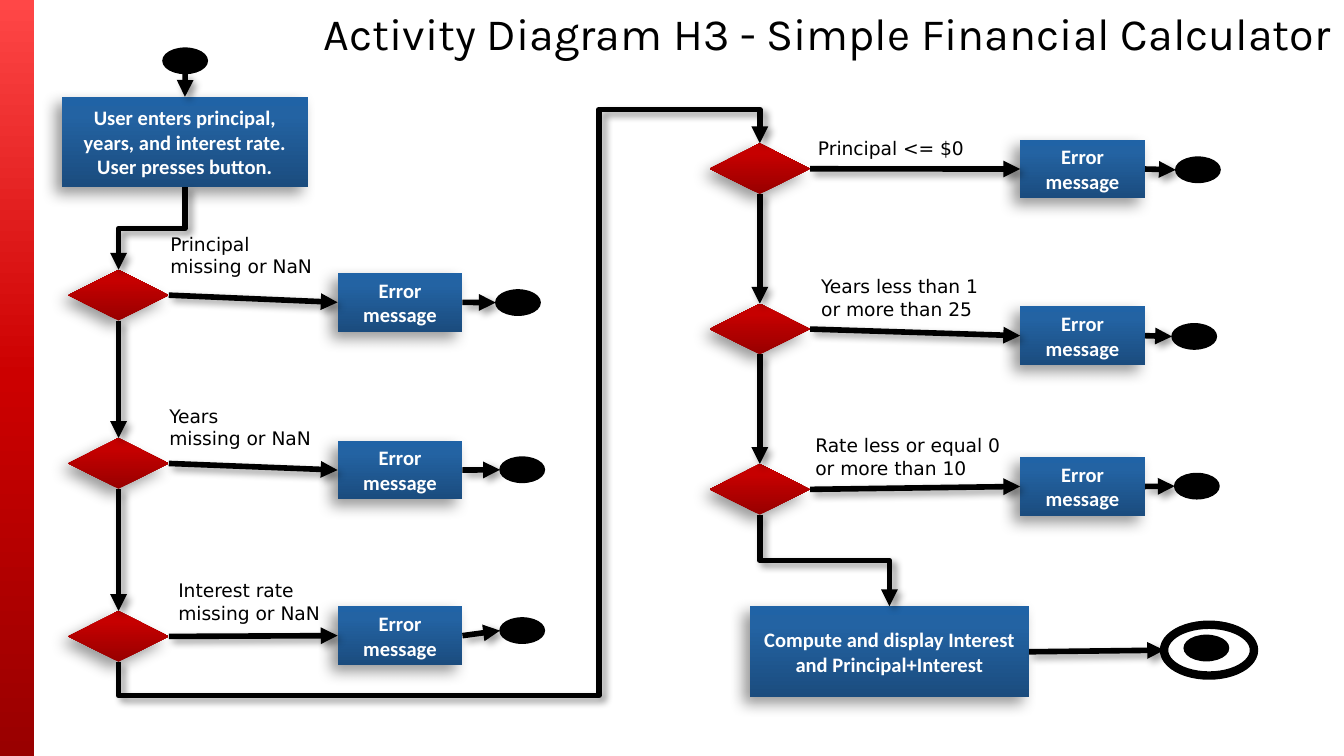
import copy

import pptx
import pptx.dml.color
import pptx.enum.shapes
import pptx.enum.text
import pptx.oxml
import pptx.oxml.ns
import pptx.util
from lxml import etree

Cm, Pt = pptx.util.Cm, pptx.util.Pt
qn = pptx.oxml.ns.qn
SHAPE = pptx.enum.shapes.MSO_SHAPE
CONNECTOR = pptx.enum.shapes.MSO_CONNECTOR
ALIGN = pptx.enum.text.PP_ALIGN
ANCHOR = pptx.enum.text.MSO_ANCHOR
AUTO_SIZE = pptx.enum.text.MSO_AUTO_SIZE

TITLE = "Activity Diagram H3 - Simple Financial Calculator"
ENTER = ("User enters principal, years, and interest rate.\vUser presses button.", 1.17, 1.83, 4.65, 1.71)
COMPUTE = ("Compute and display Interest and Principal+Interest", 14.17, 11.46, 5.28, 1.72)
ERROR = "Error message"

COLUMNS = [
    {"decision_x": 1.29, "error_x": 6.38, "checks": [
        {"decision_y": 5.1, "error_y": 5.16, "stop": (9.37, 5.48),
         "label": ("Principal missing or NaN", 2.97, 4.27, 3.35, 1.12)},
        {"decision_y": 8.28, "error_y": 8.33, "stop": (9.45, 8.64),
         "label": ("Years\vmissing or NaN", 2.95, 7.52, 3.35, 1.12)},
        {"decision_y": 11.55, "error_y": 11.46, "stop": (9.45, 11.68),
         "label": ("Interest rate missing or NaN", 3.12, 10.82, 3.35, 1.12)},
    ]},
    {"decision_x": 13.41, "error_x": 19.28, "checks": [
        {"decision_y": 2.71, "error_y": 2.64, "stop": (22.22, 2.97),
         "label": ("Principal <= $0", 15.21, 2.46, 3.4, 0.69)},
        {"decision_y": 5.74, "error_y": 5.79, "stop": (22.15, 6.12),
         "label": ("Years less than 1 or more than 25", 15.27, 5.08, 3.81, 1.12)},
        {"decision_y": 8.77, "error_y": 8.64, "stop": (22.2, 8.95),
         "label": ("Rate less or equal 0\vor more than 10", 15.16, 8.08, 4.27, 1.12)},
    ]},
]

RED = [(0, "980000"), (0.8, "C60000"), (1, "C70000")]
BLUE = [(0, "1B4C7E"), (0.8, "2363A3"), (1, "2063A6")]
SIDEBAR = [(0, "FF4747"), (0.5, "CC0000"), (1, "990000")]
TOP, LEFT, BOTTOM, RIGHT = range(4)

deck = pptx.Presentation()
deck.slide_width, deck.slide_height = Cm(25.4), Cm(14.29)
slide = deck.slides.add_slide(deck.slide_layouts[6])


def rgb(value):
    return pptx.dml.color.RGBColor.from_string(value)


def add_shadow(effects, blur, distance, angle):
    shadow = etree.SubElement(effects, qn("a:outerShdw"), blurRad=str(Pt(blur)),
                              dist=str(Pt(distance)), dir=str(angle * 60000),
                              algn="ctr", rotWithShape="0")
    black = etree.SubElement(shadow, qn("a:srgbClr"), val="000000")
    etree.SubElement(black, qn("a:alpha"), val="40000")


def gradient_shape(kind, x, y, w, h, stops, angle, shadow=True):
    shape = slide.shapes.add_shape(kind, Cm(x), Cm(y), Cm(w), Cm(h))
    shape.fill.gradient()
    shape.fill.gradient_angle = angle
    stop_list = shape._element.spPr.find(".//" + qn("a:gsLst"))
    stop_list.append(copy.deepcopy(stop_list[-1]))
    for stop, (position, color) in zip(shape.fill.gradient_stops, stops):
        stop.position = position
        stop.color.rgb = rgb(color)
    shape.line.fill.background()
    shape.shadow.inherit = False
    if shadow:
        add_shadow(shape._element.spPr.find(qn("a:effectLst")), 8, 5, 135)
    return shape


def write(shape, text, size, font, color, align=ALIGN.LEFT, bold=False):
    frame = shape.text_frame
    frame.word_wrap = True
    frame.text = text
    paragraph = frame.paragraphs[0]
    paragraph.alignment = align
    for run in paragraph.runs:
        run.font.size, run.font.name, run.font.bold = Pt(size), font, bold
        run.font.color.rgb = rgb(color)
    return frame


def process(text, x, y, w, h):
    box = gradient_shape(SHAPE.FLOWCHART_PROCESS, x, y, w, h, BLUE, 90)
    frame = write(box, text, 11, "Calibri", "FFFFFF", ALIGN.CENTER, True)
    frame.vertical_anchor = ANCHOR.MIDDLE
    frame.margin_left = frame.margin_right = frame.margin_top = frame.margin_bottom = Cm(0.25)
    return box


def ellipse(x, y, w=0.84, h=0.48, fill="000000", line_width=0.75):
    oval = slide.shapes.add_shape(SHAPE.OVAL, Cm(x), Cm(y), Cm(w), Cm(h))
    oval.fill.solid()
    oval.fill.fore_color.rgb = rgb(fill)
    oval.line.color.rgb = rgb("000000")
    oval.line.width = Pt(line_width)
    oval.shadow.inherit = False
    return oval


def label(text, x, y, w, h):
    box = slide.shapes.add_textbox(Cm(x), Cm(y), Cm(w), Cm(h))
    write(box, text, 10, "DejaVu Sans", "000000").auto_size = AUTO_SIZE.SHAPE_TO_FIT_TEXT


def side(shape, site):
    across, down = {TOP: (1, 0), LEFT: (0, 1), BOTTOM: (1, 2), RIGHT: (2, 1)}[site]
    return shape.left + shape.width * across // 2, shape.top + shape.height * down // 2


def add_arrow(kind, x1, y1, x2, y2):
    arrow = slide.shapes.add_connector(kind, x1, y1, x2, y2)
    arrow.line.color.rgb = rgb("000000")
    arrow.line.width = Pt(3)
    properties = arrow._element.spPr
    etree.SubElement(properties.find(qn("a:ln")), qn("a:tailEnd"), type="triangle")
    add_shadow(etree.SubElement(properties, qn("a:effectLst")), 4, 3, 45)
    return arrow


def straight(source, source_site, target, target_site):
    arrow = add_arrow(CONNECTOR.STRAIGHT, *side(source, source_site), *side(target, target_site))
    for shape, site, connect in ((source, source_site, arrow.begin_connect),
                                 (target, target_site, arrow.end_connect)):
        if shape.auto_shape_type != SHAPE.OVAL:
            connect(shape, site)


def elbow(source, target, rotation, flips, bends):
    (x1, y1), (x2, y2) = side(source, BOTTOM), side(target, TOP)
    w, h = abs(y2 - y1), abs(x2 - x1)
    x, y = (x1 + x2 - w) // 2, (y1 + y2 - h) // 2
    arrow = add_arrow(CONNECTOR.ELBOW, x, y, x + w, y + h)
    frame = arrow._element.spPr.find(qn("a:xfrm"))
    frame.set("rot", str(rotation * 60000))
    for flip in flips:
        frame.set(flip, "1")
    geometry = arrow._element.spPr.find(qn("a:prstGeom"))
    geometry.set("prst", f"bentConnector{len(bends) + 2}")
    for number, bend in enumerate(bends, 1):
        etree.SubElement(geometry.find(qn("a:avLst")), qn("a:gd"),
                         name=f"adj{number}", fmla=f"val {bend}")


gradient_shape(SHAPE.RECTANGLE, 0, 0, 0.64, 14.29, SIDEBAR, 270, shadow=False)
title = slide.shapes.add_textbox(Cm(1.07), Cm(0.05), Cm(24.33), Cm(1.15))
write(title, TITLE, 24, "Karla", "000000", ALIGN.RIGHT).vertical_anchor = ANCHOR.MIDDLE

start = ellipse(3.08, 0.91)
enter = process(*ENTER)
straight(start, BOTTOM, enter, TOP)

decisions = []
for column in COLUMNS:
    chain = []
    for check in column["checks"]:
        decision = gradient_shape(SHAPE.FLOWCHART_DECISION, column["decision_x"],
                                  check["decision_y"], 1.9, 0.96, RED, 90)
        error = process(ERROR, column["error_x"], check["error_y"], 2.36, 1.11)
        stop = ellipse(*check["stop"])
        straight(decision, RIGHT, error, LEFT)
        straight(error, RIGHT, stop, LEFT)
        label(*check["label"])
        if chain:
            straight(chain[-1], BOTTOM, decision, TOP)
        chain.append(decision)
    decisions.append(chain)

compute = process(*COMPUTE)
finish = ellipse(22, 11.81, 1.7, 0.96, "FFFFFF", 4.5)
ellipse(22.38, 12.01)
straight(compute, RIGHT, finish, LEFT)

missing, out_of_range = decisions
elbow(enter, missing[0], 90, [], [50000])
elbow(missing[-1], out_of_range[0], 90, ["flipH", "flipV"], [-6500, 74900, 106500])
elbow(out_of_range[-1], compute, 270, ["flipH"], [50000])

deck.save("out.pptx")
